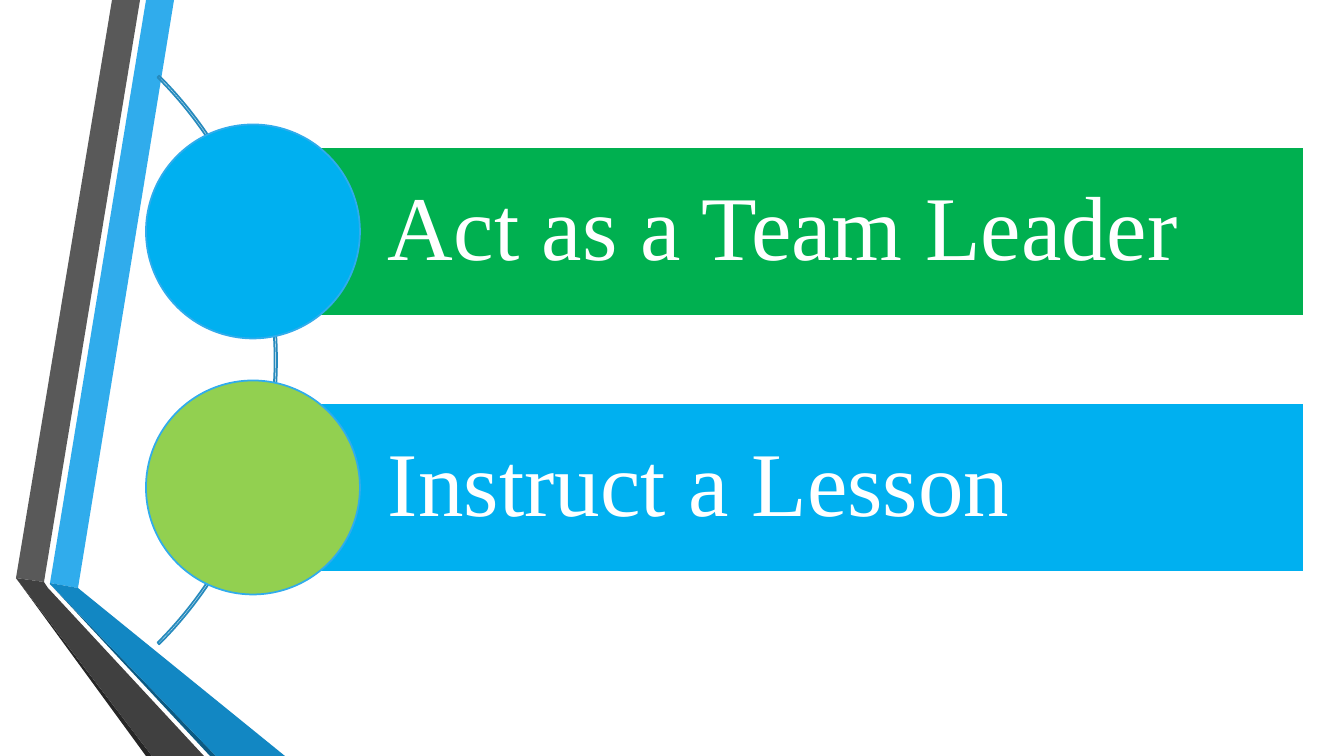
from dataclasses import dataclass
from typing import Any

from lxml.etree import SubElement
from pptx import Presentation
from pptx.dml.color import RGBColor
from pptx.enum.shapes import MSO_SHAPE
from pptx.enum.text import MSO_ANCHOR, MSO_AUTO_SIZE, PP_ALIGN
from pptx.oxml.ns import qn
from pptx.util import Pt

EMU_PER_PX = 914400 / 100.8
SLIDE_WIDTH, SLIDE_HEIGHT = 1344, 756
TWO_CONTENT_LAYOUT = 3

BAR_LEFT, BAR_TOP, BAR_WIDTH, BAR_HEIGHT = 253, 147, 1051, 169
BAR_PITCH = 256
CIRCLE_SIZE = 214
ARC_LEFT, ARC_TOP, ARC_SIZE = -527, -42, 804


@dataclass(frozen=True)
class Theme:
    font: str = "Times New Roman"
    text_size: float = 65
    outline: float = 1.25
    white: str = "FFFFFF"
    sky: str = "30ACEC"
    blue: str = "1287C3"
    navy: str = "0C5A82"
    gray: str = "595959"
    charcoal: str = "404040"
    black: str = "262626"
    arc: str = "268ABD"
    green: str = "00B050"
    azure: str = "00B0F0"
    lime: str = "92D050"


THEME = Theme()


@dataclass(frozen=True)
class Ribbon:
    color: str
    points: tuple[tuple[int, int], ...]


@dataclass(frozen=True)
class Task:
    label: str
    bar_color: str
    circle_color: str


RIBBONS = (
    Ribbon(THEME.sky, ((50, 583), (78, 588), (174, 0), (146, 0))),
    Ribbon(THEME.gray, ((140, 0), (112, 0), (16, 578), (44, 582))),
    Ribbon(THEME.black, ((16, 578), (146, 756), (152, 756))),
    Ribbon(THEME.navy, ((50, 584), (210, 756), (216, 756))),
    Ribbon(THEME.blue, ((50, 583), (50, 584), (216, 756), (285, 756), (78, 588))),
    Ribbon(THEME.charcoal, ((204, 756), (48, 588), (44, 582), (16, 578), (152, 756))),
)

TASKS = (
    Task("Act as a Team Leader", THEME.green, THEME.azure),
    Task("Instruct a Lesson", THEME.azure, THEME.lime),
)


def px(length: float) -> int:
    return round(length * EMU_PER_PX)


def apply_format(target: Any, values: dict[str, Any]) -> None:
    for name, value in values.items():
        setattr(target, name, value)


def paint(shape: Any, fill: str | None, outline: str | None) -> None:
    if fill is None:
        shape.fill.background()
    else:
        shape.fill.solid()
        shape.fill.fore_color.rgb = RGBColor.from_string(fill)
    if outline is None:
        shape.line.fill.background()
    else:
        shape.line.color.rgb = RGBColor.from_string(outline)
        shape.line.width = Pt(THEME.outline)


def draw_ribbon(slide: Any, ribbon: Ribbon) -> None:
    start, *rest = ribbon.points
    builder = slide.shapes.build_freeform(*start, scale=EMU_PER_PX)
    builder.add_line_segments(rest, close=True)
    band = builder.convert_to_shape()
    band.shadow.inherit = False
    paint(band, ribbon.color, None)


def draw_arc(slide: Any) -> None:
    arc = slide.shapes.add_shape(
        MSO_SHAPE.BLOCK_ARC, px(ARC_LEFT), px(ARC_TOP), px(ARC_SIZE), px(ARC_SIZE)
    )
    for index, value in enumerate((189, 27, 0.003)):
        arc.adjustments[index] = value
    arc.shadow.inherit = False
    paint(arc, None, THEME.arc)


def fill_bar(bar: Any, task: Task, top: int) -> None:
    apply_format(bar, {
        "left": px(BAR_LEFT),
        "top": px(top),
        "width": px(BAR_WIDTH),
        "height": px(BAR_HEIGHT),
    })
    paint(bar, task.bar_color, THEME.white)
    frame = bar.text_frame
    frame.text = task.label
    apply_format(frame, {
        "word_wrap": True,
        "auto_size": MSO_AUTO_SIZE.NONE,
        "vertical_anchor": MSO_ANCHOR.MIDDLE,
        "margin_left": px(135),
        "margin_top": px(18),
        "margin_right": px(18),
        "margin_bottom": px(18),
    })
    label = frame.paragraphs[0]
    apply_format(label, {
        "alignment": PP_ALIGN.LEFT,
        "line_spacing": 0.9,
        "space_before": Pt(0),
    })
    properties = label._p.get_or_add_pPr()
    for name in ("marL", "indent"):
        properties.set(name, "0")
    SubElement(properties, qn("a:buNone"))
    font = label.runs[0].font
    apply_format(font, {"name": THEME.font, "size": Pt(THEME.text_size)})
    font.color.rgb = RGBColor.from_string(THEME.white)


def draw_circle(slide: Any, task: Task, bar_top: int) -> None:
    circle = slide.shapes.add_shape(
        MSO_SHAPE.OVAL,
        px(BAR_LEFT - CIRCLE_SIZE / 2),
        px(bar_top + (BAR_HEIGHT - CIRCLE_SIZE) / 2),
        px(CIRCLE_SIZE),
        px(CIRCLE_SIZE),
    )
    circle.shadow.inherit = False
    paint(circle, task.circle_color, THEME.sky)


def main() -> None:
    deck = Presentation()
    apply_format(deck, {
        "slide_width": px(SLIDE_WIDTH),
        "slide_height": px(SLIDE_HEIGHT),
    })
    slide = deck.slides.add_slide(deck.slide_layouts[TWO_CONTENT_LAYOUT])
    title, *bars = slide.placeholders
    title.element.getparent().remove(title.element)

    for ribbon in RIBBONS:
        draw_ribbon(slide, ribbon)
    draw_arc(slide)
    for row, (bar, task) in enumerate(zip(bars, TASKS)):
        bar_top = BAR_TOP + row * BAR_PITCH
        fill_bar(bar, task, bar_top)
        draw_circle(slide, task, bar_top)

    deck.save("out.pptx")


if __name__ == "__main__":
    main()
